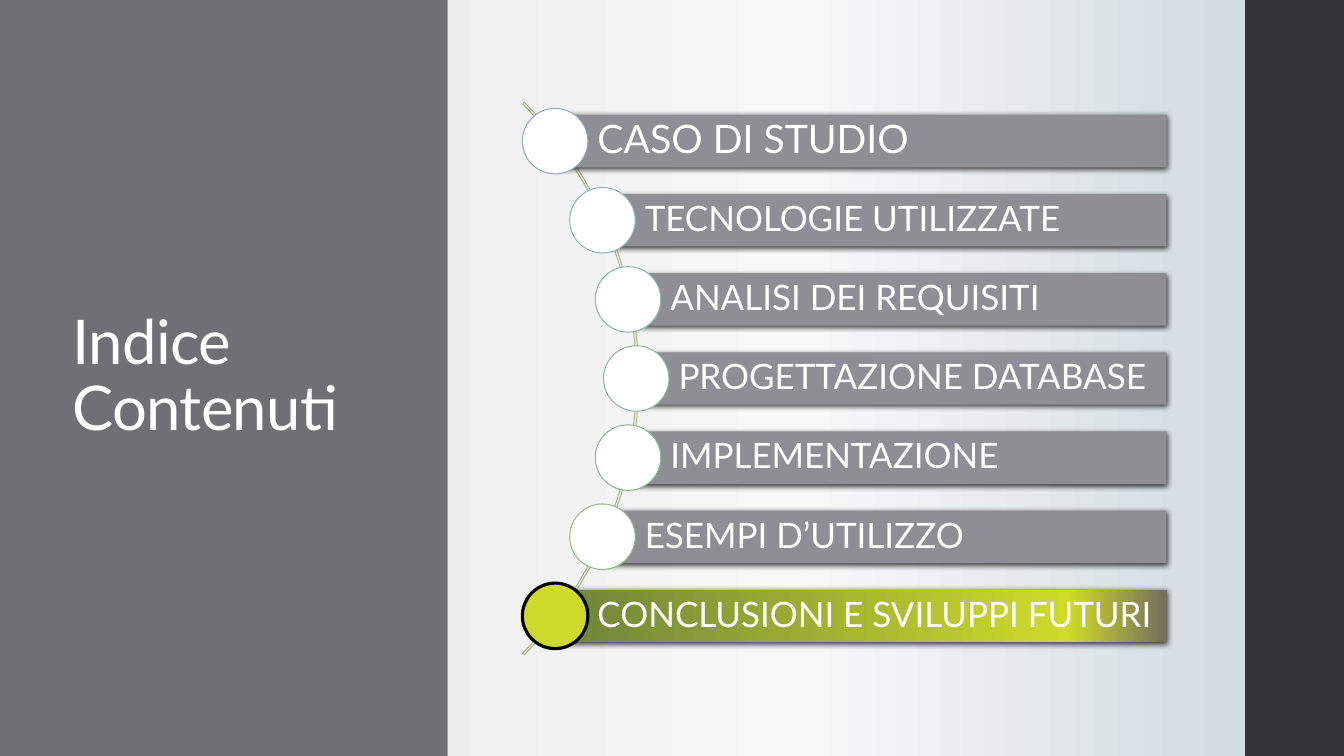
from math import sqrt

from lxml.etree import SubElement
from pptx import Presentation
from pptx.dml.color import RGBColor
from pptx.enum.shapes import MSO_SHAPE
from pptx.enum.text import MSO_ANCHOR, PP_ALIGN
from pptx.oxml.ns import qn
from pptx.util import Inches, Pt

FONT = "Lato"
COLORS = {
    "white": "FFFFFF", "black": "000000", "panel": "6F6F74", "edge": "353537",
    "bar": "8E8E94", "arc": "A7B789", "lime": "CDDA29",
}
# Gradient stops: position in percent, colour, opacity in percent
BACKGROUND = [(0, "E1E1E2", 100), (60, "F8F8F8", 100), (98, "CBD6DD", 72),
              (100, "F2F2F2", 100), (100, "FFFFFF", 100)]
HIGHLIGHT = [(0, "6E833B", 100), (84, "CEDB29", 100), (100, "746D5D", 100)]
# Entry, text size, outline of its circle
ENTRIES = [
    ("CASO DI STUDIO", 28, "92A9B9"),
    ("TECNOLOGIE UTILIZZATE", 25, "91B6B9"),
    ("ANALISI DEI REQUISITI", 25, "8FB8AD"),
    ("PROGETTAZIONE DATABASE", 25, "8EB89E"),
    ("IMPLEMENTAZIONE", 25, "8CB88E"),
    ("ESEMPI D’UTILIZZO", 25, "98B78B"),
    ("CONCLUSIONI E SVILUPPI FUTURI", 25, COLORS["black"]),
]


def rgb(value):
    return RGBColor.from_string(value)


def set_gradient(fill, root, stops):
    """Give fill, the only gradient under root, a left-to-right run of stops."""
    fill.gradient()
    fill.gradient_angle = 0
    gs_list = root.find(".//" + qn("a:gsLst"))
    for gs in list(gs_list):
        gs_list.remove(gs)
    for pos, color, opacity in stops:
        gs = SubElement(gs_list, qn("a:gs"), pos=str(pos * 1000))
        clr = SubElement(gs, qn("a:srgbClr"), val=color)
        if opacity < 100:
            SubElement(clr, qn("a:alpha"), val=str(opacity * 1000))


def add_shape(slide, kind, box, fill=None, line=None, width=0.75):
    sp = slide.shapes.add_shape(kind, *map(Inches, box))
    sp.shadow.inherit = False
    if fill:
        sp.fill.solid()
        sp.fill.fore_color.rgb = rgb(fill)
    else:
        sp.fill.background()
    if line:
        sp.line.color.rgb = rgb(line)
        sp.line.width = Pt(width)
    else:
        sp.line.fill.background()
    return sp


def add_shadow(sp):
    effects = sp.element.spPr.find(qn("a:effectLst"))
    shadow = SubElement(effects, qn("a:outerShdw"), blurRad=str(Pt(4)), dist=str(Pt(1.2)),
                        dir="5400000", algn="ctr", rotWithShape="0")
    clr = SubElement(shadow, qn("a:srgbClr"), val=COLORS["black"])
    SubElement(clr, qn("a:alpha"), val="75000")


def set_text(sp, text, size):
    tf = sp.text_frame
    tf.word_wrap = True
    tf.vertical_anchor = MSO_ANCHOR.MIDDLE
    p = tf.paragraphs[0]
    p.text = text
    p.alignment = PP_ALIGN.LEFT
    p.line_spacing = 0.9
    p.font.name = FONT
    p.font.size = Pt(size)
    p.font.color.rgb = rgb(COLORS["white"])
    return tf


def add_title_panel(slide, left, top, width, height):
    add_shape(slide, MSO_SHAPE.RECTANGLE, (left, top, width, height), COLORS["panel"])
    box = (left + 0.62, top + 0.91, width - 1.47, height - 1.83)
    title = slide.shapes.add_textbox(*map(Inches, box))
    tf = set_text(title, "Indice Contenuti", 44)
    tf.paragraphs[0].runs[0].font._element.set("spc", "-50")


def add_entry(slide, left, middle, right, text, size, outline, highlighted):
    """Place a bar from left to right, with a circle centred on its left end."""
    height, diameter = 0.52, 0.65
    bar = add_shape(slide, MSO_SHAPE.RECTANGLE,
                    (left, middle - height / 2, right - left, height), COLORS["bar"])
    if highlighted:
        set_gradient(bar.fill, bar.element, HIGHLIGHT)
    add_shadow(bar)
    tf = set_text(bar, text, size)
    tf.margin_left = Inches(0.42)
    tf.margin_top = tf.margin_right = tf.margin_bottom = Inches(0.07)
    add_shape(slide, MSO_SHAPE.OVAL,
              (left - diameter / 2, middle - diameter / 2, diameter, diameter),
              COLORS["lime"] if highlighted else COLORS["white"],
              outline, 2.25 if highlighted else 0.75)


def add_contents(slide, left, top, width, height):
    """Spread the entries down the box, their circles along an arc bulging right."""
    diameter, radius, pitch = 7.75, 3.85, 0.785
    center_x, center_y = left - 2.71, top + height / 2
    arc = add_shape(slide, MSO_SHAPE.BLOCK_ARC,
                    (center_x - diameter / 2, center_y - diameter / 2, diameter, diameter),
                    line=COLORS["arc"])
    for i, value in enumerate((189, 27, 0.003)):
        arc.adjustments[i] = value
    last = len(ENTRIES) - 1
    for i, (text, size, outline) in enumerate(ENTRIES):
        dy = (i - last / 2) * pitch
        add_entry(slide, center_x + sqrt(radius ** 2 - dy ** 2), center_y + dy,
                  left + width, text, size, outline, i == last)


def main():
    prs = Presentation()
    prs.slide_width, prs.slide_height = Inches(13.33), Inches(7.5)
    slide = prs.slides.add_slide(prs.slide_layouts[6])
    set_gradient(slide.background.fill, slide.element, BACKGROUND)
    add_title_panel(slide, 0, 0, 4.44, 7.5)
    add_shape(slide, MSO_SHAPE.RECTANGLE, (12.35, 0, 0.98, 7.5), COLORS["edge"])
    add_contents(slide, 5.17, 1.08, 6.4, 5.35)
    prs.save("out.pptx")


if __name__ == "__main__":
    main()
